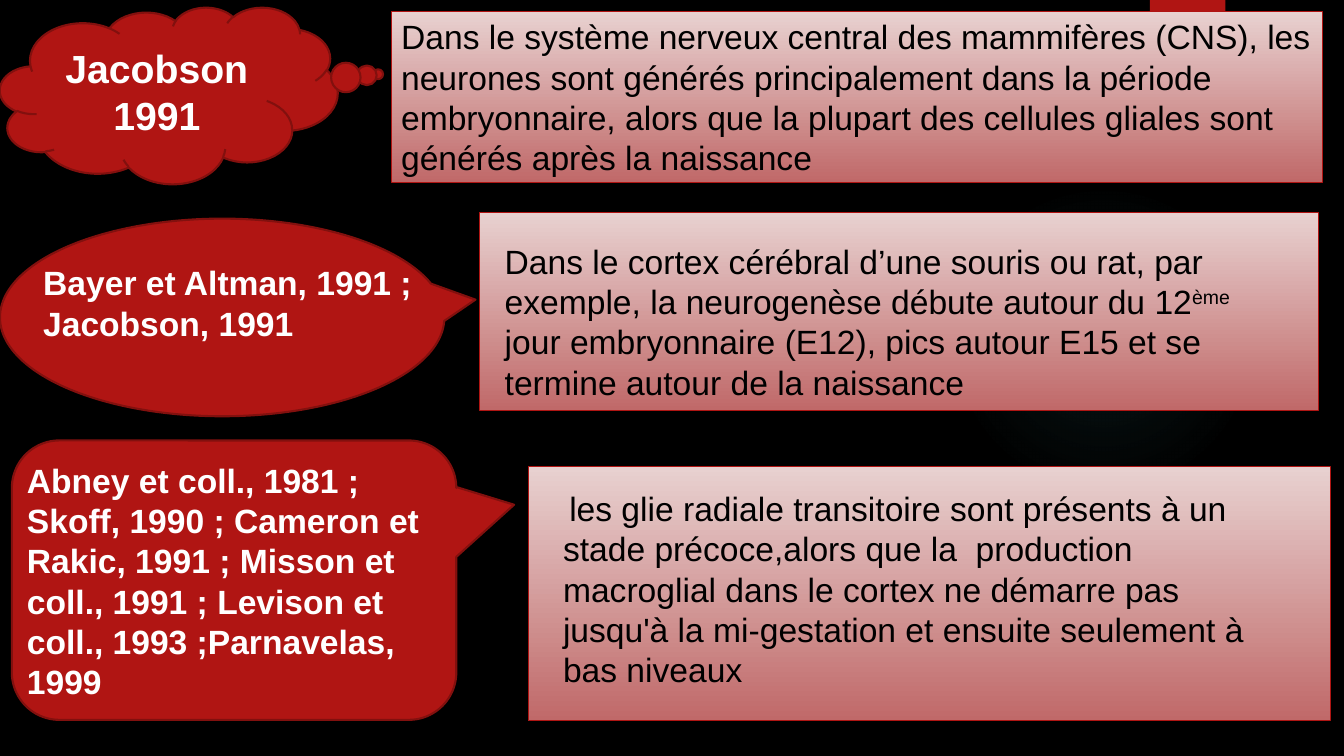
"""Builds a slide pairing cited authors with their findings on neurogenesis."""
from pptx import Presentation
from pptx.dml.color import RGBColor
from pptx.enum.shapes import MSO_SHAPE
from pptx.enum.text import MSO_ANCHOR, MSO_AUTO_SIZE, PP_ALIGN
from pptx.oxml import parse_xml
from pptx.oxml.ns import nsdecls, qn
from pptx.util import Cm, Pt

BLACK = RGBColor(0x00, 0x00, 0x00)
WHITE = RGBColor(0xFF, 0xFF, 0xFF)
RED = RGBColor(0xB0, 0x15, 0x13)
DARK = RGBColor(0x82, 0x10, 0x0E)
PALE = RGBColor(0xE8, 0xD1, 0xD0)
ROSE = RGBColor(0xC0, 0x69, 0x69)
TEAL = RGBColor(0x50, 0xB9, 0xC1)

GLOW = (23.9, 4.65, 7.82, 7.82)
GLOW_STOPS = [(0, 7), (36, 6), (69, 0)]
TAB = (28.98, 0, 1.9, 3.18)

PANELS = [
    (13.31, 11.76, 20.22, 6.4),
    (12.09, 5.36, 21.13, 4.98),
    (9.86, 0.3, 23.47, 4.29),
]
CALLS = [
    (MSO_SHAPE.ROUNDED_RECTANGULAR_CALLOUT, (0.3, 11.1, 11.2, 7.04), (0.63, -0.27, 0.17)),
    (MSO_SHAPE.OVAL_CALLOUT, (0, 5.51, 11.2, 4.98), (0.57, -0.09)),
    (MSO_SHAPE.CLOUD_CALLOUT, (0, 0.18, 8.51, 4.45), (0.62, -0.12)),
]

CLOUD_TEXT = ["Jacobson 1991"]
TOP_TEXT = [
    "Dans le système nerveux central des mammifères (CNS), les neurones sont "
    "générés principalement dans la période embryonnaire, alors que la plupart "
    "des cellules gliales sont générés après la naissance"
]
NOTES = [
    ((0.84, 6.48, 10.13, 2.31), False, WHITE, True,
     ["Bayer et Altman, 1991 ;", "Jacobson, 1991"]),
    ((12.47, 5.94, 20.4, 4.37), True, BLACK, False,
     [["Dans le cortex cérébral d’une souris ou rat, par exemple, la neurogenèse "
       "débute autour du 12", "ème",
       " jour embryonnaire (E12), pics autour E15 et se termine autour de la naissance"]]),
    ((0.43, 11.46, 10.54, 6.4), True, WHITE, True,
     ["Abney et coll., 1981 ; Skoff, 1990 ; Cameron et Rakic, 1991 ; Misson et "
      "coll., 1991 ; Levison et coll., 1993 ;Parnavelas, 1999"]),
    ((13.94, 12.17, 18.08, 5.38), True, BLACK, False,
     [[" ", "les glie radiale transitoire sont présents à un stade précoce,alors que "
       "la  production macroglial dans le cortex ne démarre pas jusqu'à la "
       "mi-gestation et ensuite seulement à bas niveaux"]]),
]


def add(slide, kind, place):
    shape = slide.shapes.add_shape(kind, *map(Cm, place))
    shape.shadow.inherit = False
    shape.line.fill.background()
    return shape


def paint(shape, fill, edge=None, width=0):
    shape.fill.solid()
    shape.fill.fore_color.rgb = fill
    if edge is not None:
        outline(shape, edge, width)


def outline(shape, edge, width):
    shape.line.color.rgb = edge
    shape.line.width = Pt(width)


def write(frame, lines, color, bold=False, size=24, align=PP_ALIGN.LEFT):
    for i, line in enumerate(lines):
        para = frame.add_paragraph() if i else frame.paragraphs[0]
        para.alignment = align
        for part in [line] if isinstance(line, str) else line:
            run = para.add_run()
            run.text = part
            font = run.font
            font.name, font.size, font.bold = "Arial", Pt(size), bold
            font.color.rgb = color
            if part == "ème":
                run._r.get_or_add_rPr().set("baseline", "30000")
            elif part == " ":
                font.name, font.size = "League Spartan", Pt(18)


def add_glow(slide):
    glow = add(slide, MSO_SHAPE.OVAL, GLOW)
    glow.fill.background()
    stops = "".join(
        f'<a:gs pos="{pos * 1000}"><a:srgbClr val="{TEAL}">'
        f'<a:alpha val="{alpha * 1000}"/></a:srgbClr></a:gs>'
        for pos, alpha in GLOW_STOPS)
    grad = parse_xml(
        f'<a:gradFill {nsdecls("a")}><a:gsLst>{stops}</a:gsLst><a:path path="circle">'
        '<a:fillToRect l="50000" t="50000" r="50000" b="50000"/></a:path></a:gradFill>')
    props = glow._element.spPr
    props.replace(props.find(qn("a:noFill")), grad)


def add_panel(slide, place):
    panel = add(slide, MSO_SHAPE.FLOWCHART_PROCESS, place)
    panel.fill.gradient()
    panel.fill.gradient_angle = 270
    for stop, color, pos in zip(panel.fill.gradient_stops, (PALE, ROSE), (0, 1)):
        stop.color.rgb = color
        stop.position = pos
    outline(panel, RED, 0.75)
    return panel


def add_call(slide, kind, place, tips):
    call = add(slide, kind, place)
    paint(call, RED, DARK, 1.5)
    for i, tip in enumerate(tips):
        call.adjustments[i] = tip
    return call


def main():
    deck = Presentation()
    deck.slide_width, deck.slide_height = Cm(33.87), Cm(19.05)
    slide = deck.slides.add_slide(deck.slide_layouts[6])
    slide.background.fill.solid()
    slide.background.fill.fore_color.rgb = BLACK
    add_glow(slide)
    paint(add(slide, MSO_SHAPE.RECTANGLE, TAB), RED)

    for place, call in zip(PANELS, CALLS):
        panel = add_panel(slide, place)
        cloud = add_call(slide, *call)
    for shape in (panel, cloud):
        shape.text_frame.vertical_anchor = MSO_ANCHOR.MIDDLE
    write(panel.text_frame, TOP_TEXT, BLACK)
    write(cloud.text_frame, CLOUD_TEXT, WHITE, True, 28, PP_ALIGN.CENTER)

    for place, wrap, color, bold, lines in NOTES:
        frame = slide.shapes.add_textbox(*map(Cm, place)).text_frame
        frame.word_wrap = wrap
        frame.auto_size = MSO_AUTO_SIZE.SHAPE_TO_FIT_TEXT
        write(frame, lines, color, bold)
    deck.save("out.pptx")


if __name__ == "__main__":
    main()
